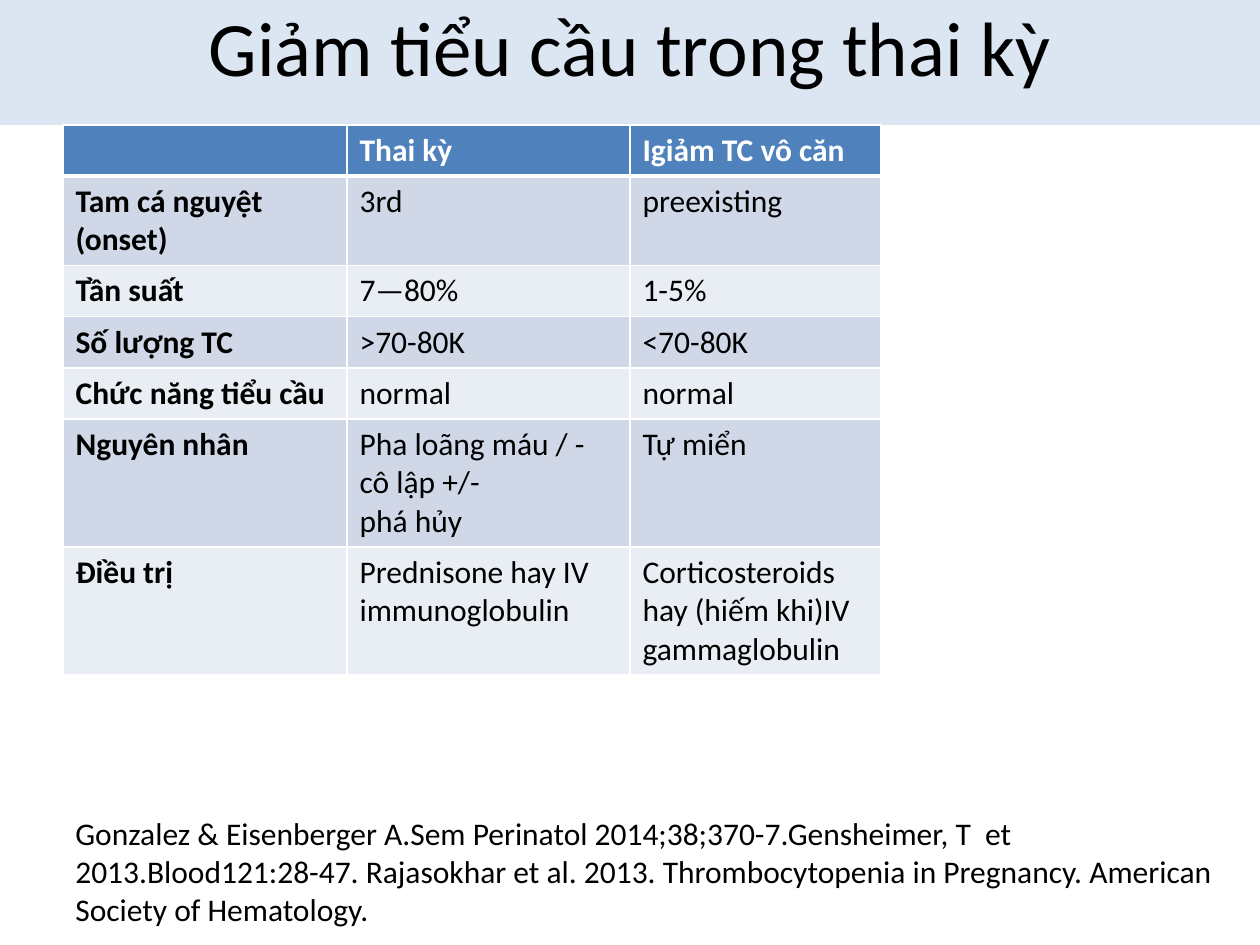
import pptx
import pptx.dml.color
import pptx.enum.text
import pptx.oxml
import pptx.oxml.ns
import pptx.util

SLIDE_WIDTH, SLIDE_HEIGHT = 1260, 945
EMU_PER_PX = 914400 / 126

TABLE_ROWS = [
    ["", "Thai kỳ", "Igiảm TC vô căn"],
    ["Tam cá nguyệt\n(onset)", "3rd", "preexisting"],
    ["Tần suất", "7—80%", "1-5%"],
    ["Số lượng TC", ">70-80K", "<70-80K"],
    ["Chức năng tiểu cầu", "normal", "normal"],
    ["Nguyên nhân", "Pha loãng máu / -\ncô lập +/-\nphá hủy", "Tự miển"],
    ["Điều trị", "Prednisone hay IV\nimmunoglobulin",
     "Corticosteroids hay (hiếm khi)IV gammaglobulin"],
]
REFERENCES = (
    "Gonzalez & Eisenberger A.Sem Perinatol 2014;38;370-7.Gensheimer, T  et "
    "2013.Blood121:28-47. Rajasokhar et al. 2013. Thrombocytopenia in Pregnancy. "
    "American Society of Hematology."
)


def px(length):
    return pptx.util.Emu(round(length * EMU_PER_PX))


def color(hex_string):
    return pptx.dml.color.RGBColor.from_string(hex_string)


class SlideBuilder:
    font_name = "Calibri"
    text_color = "000000"
    line_color = "FFFFFF"
    title_fill = "DCE6F2"
    header_fill = "4F81BD"
    header_text = "FFFFFF"
    band_fills = ["E9EDF4", "D0D8E8"]
    title_size, body_size = 44, 18

    def __init__(self, slide):
        self.slide = slide

    def format_text(self, text_frame, size, hex_string, bold=False):
        for paragraph in text_frame.paragraphs:
            font = paragraph.font
            font.name = self.font_name
            font.size = pptx.util.Pt(size)
            font.bold = bold
            font.color.rgb = color(hex_string)

    def title(self, text, left, top, width, height):
        shape = self.slide.shapes.title
        shape.left, shape.top = px(left), px(top)
        shape.width, shape.height = px(width), px(height)
        shape.fill.solid()
        shape.fill.fore_color.rgb = color(self.title_fill)
        text_frame = shape.text_frame
        text_frame.text = text
        text_frame.vertical_anchor = pptx.enum.text.MSO_ANCHOR.MIDDLE
        text_frame.paragraphs[0].alignment = pptx.enum.text.PP_ALIGN.CENTER
        self.format_text(text_frame, self.title_size, self.text_color)

    def cell_borders(self, cell, widths):
        properties = cell._tc.get_or_add_tcPr()
        for position, (side, points) in enumerate(widths.items()):
            line = pptx.oxml.parse_xml(
                f'<a:ln{side} {pptx.oxml.ns.nsdecls("a")} w="{pptx.util.Pt(points)}">'
                f'<a:solidFill><a:srgbClr val="{self.line_color}"/></a:solidFill>'
                f'</a:ln{side}>'
            )
            properties.insert(position, line)

    def table(self, rows, left, top, column_widths, row_height):
        frame = self.slide.shapes.add_table(
            len(rows), len(column_widths), px(left), px(top),
            px(sum(column_widths)), px(row_height * len(rows)))
        table = frame.table
        for column, width in zip(table.columns, column_widths):
            column.width = px(width)
        for row_index, texts in enumerate(rows):
            is_header = row_index == 0
            fill = self.header_fill if is_header else self.band_fills[row_index % 2]
            text_color = self.header_text if is_header else self.text_color
            # The rule under the header is thicker than the others
            widths = {"L": 1, "R": 1, "T": 3 if row_index == 1 else 1,
                      "B": 3 if is_header else 1}
            for column_index, text in enumerate(texts):
                cell = table.cell(row_index, column_index)
                cell.text = text
                cell.fill.solid()
                cell.fill.fore_color.rgb = color(fill)
                self.format_text(cell.text_frame, self.body_size, text_color,
                                 bold=is_header or column_index == 0)
                self.cell_borders(cell, widths)

    def text(self, text, left, top, width, height):
        shape = self.slide.shapes.add_textbox(px(left), px(top), px(width), px(height))
        text_frame = shape.text_frame
        text_frame.word_wrap = True
        text_frame.auto_size = pptx.enum.text.MSO_AUTO_SIZE.SHAPE_TO_FIT_TEXT
        text_frame.text = text
        self.format_text(text_frame, self.body_size, self.text_color)


def main():
    presentation = pptx.Presentation()
    presentation.slide_width = px(SLIDE_WIDTH)
    presentation.slide_height = px(SLIDE_HEIGHT)
    title_only = presentation.slide_layouts[5]
    builder = SlideBuilder(presentation.slides.add_slide(title_only))

    # Title band
    builder.title("Giảm tiểu cầu trong thai kỳ", 0, -33, SLIDE_WIDTH, 158)

    # Comparison table
    builder.table(TABLE_ROWS, 63, 125, [284, 283, 251], 51)

    # References
    builder.text(REFERENCES, 63, 808, 1197, 165)

    presentation.save("out.pptx")


if __name__ == "__main__":
    main()
